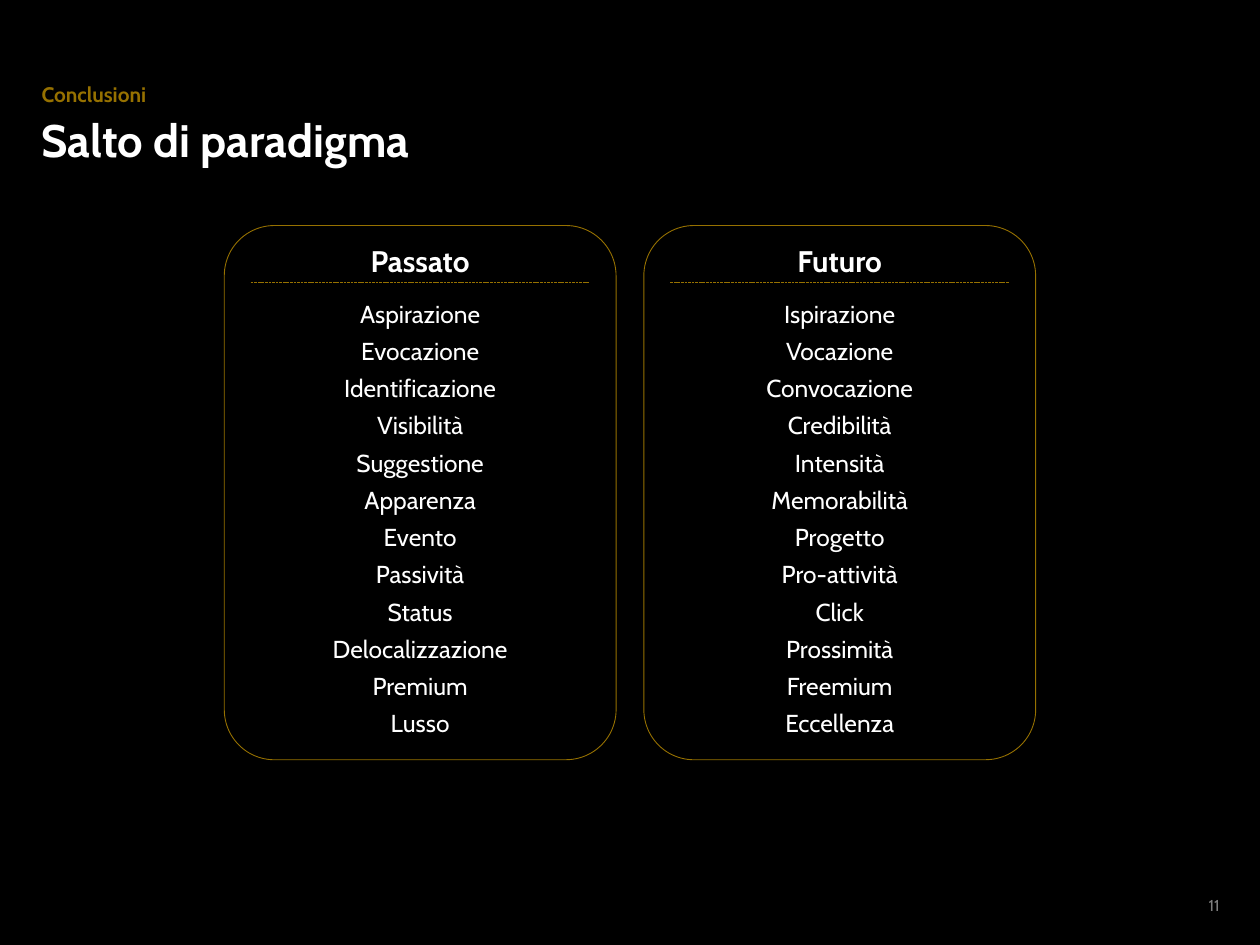
from pptx import Presentation
from pptx.dml.color import RGBColor
from pptx.enum.dml import MSO_LINE_DASH_STYLE as Dash
from pptx.enum.shapes import MSO_CONNECTOR as Connector, MSO_SHAPE as Shape
from pptx.enum.text import MSO_ANCHOR as Anchor, PP_ALIGN as Align
from pptx.oxml.ns import qn
from pptx.util import Inches, Pt
from lxml.etree import SubElement

FONT = "Cabin"
COLORS = {"black": "000000", "white": "FFFFFF", "gold": "967100", "gray": "7F7F7F"}

CARDS = {
    "Passato": [
        "Aspirazione", "Evocazione", "Identificazione", "Visibilità",
        "Suggestione", "Apparenza", "Evento", "Passività", "Status",
        "Delocalizzazione", "Premium", "Lusso",
    ],
    "Futuro": [
        "Ispirazione", "Vocazione", "Convocazione", "Credibilità",
        "Intensità", "Memorabilità", "Progetto", "Pro-attività", "Click",
        "Prossimità", "Freemium", "Eccellenza",
    ],
}


def color(name):
    return RGBColor.from_string(COLORS[name])


def style_para(para, size, color_name, bold=False, align=Align.LEFT):
    para.alignment = align
    para.font.name = FONT
    para.font.size = Pt(size)
    para.font.bold = bold
    para.font.color.rgb = color(color_name)


def set_frame(frame, anchor, left=0, top=0, right=0, bottom=0):
    """Wrap the text and set its anchor and its margins in inches."""
    frame.word_wrap = True
    frame.vertical_anchor = anchor
    frame.margin_left, frame.margin_top = Inches(left), Inches(top)
    frame.margin_right, frame.margin_bottom = Inches(right), Inches(bottom)


def style_line(line):
    line.color.rgb = color("gold")
    line.width = Pt(0.5)


def add_heading(page, left, top, width):
    kicker = page.shapes.add_textbox(
        Inches(left), Inches(top), Inches(1.39), Inches(0.29))
    set_frame(kicker.text_frame, Anchor.TOP, top=0.04, right=0.09, bottom=0.04)
    kicker.text_frame.text = "Conclusioni"
    style_para(kicker.text_frame.paragraphs[0], 12, "gold", bold=True)

    title = page.shapes.title
    title.left, title.top = Inches(left), Inches(top + 0.28)
    title.width, title.height = Inches(width), Inches(0.56)
    set_frame(title.text_frame, Anchor.TOP)
    title.text_frame.text = "Salto di paradigma"
    style_para(title.text_frame.paragraphs[0], 26, "white", bold=True)


def add_card(shapes, heading, words, left, top, width, height):
    """Add a rounded outline with a heading, a dashed rule and a word list."""
    card = shapes.add_shape(
        Shape.ROUNDED_RECTANGLE,
        Inches(left), Inches(top), Inches(width), Inches(height))
    card.adjustments[0] = 0.128
    card.shadow.inherit = False
    card.fill.background()
    style_line(card.line)

    frame = card.text_frame
    set_frame(frame, Anchor.MIDDLE, left=0.1, right=0.1, bottom=0.05)
    frame.text = "\n".join([heading, *words])
    for para in frame.paragraphs:
        style_para(para, 14, "white", align=Align.CENTER)
        para.line_spacing = Pt(21.3)
    first, second = frame.paragraphs[:2]
    style_para(first, 17, "white", bold=True, align=Align.CENTER)
    second.space_before = Pt(7)

    inset, rule_y = 0.21, Inches(top + 0.45)
    rule = shapes.add_connector(
        Connector.STRAIGHT,
        Inches(left + inset), rule_y, Inches(left + width - inset), rule_y)
    style_line(rule.line)
    rule.line.dash_style = Dash.SQUARE_DOT
    SubElement(rule.element.spPr, qn("a:effectLst"))


def add_cards(page, left, top, width, height, gap):
    group = page.shapes.add_group_shape()
    card_width = (width - gap) / len(CARDS)
    for index, (heading, words) in enumerate(CARDS.items()):
        card_left = left + index * (card_width + gap)
        add_card(group.shapes, heading, words, card_left, top, card_width, height)


def add_page_number(page, left, top, width, height):
    number = page.shapes.add_textbox(
        Inches(left), Inches(top), Inches(width), Inches(height))
    set_frame(number.text_frame, Anchor.MIDDLE)
    number.text_frame.text = "11"
    style_para(number.text_frame.paragraphs[0], 9, "gray", align=Align.RIGHT)


def main():
    deck = Presentation()
    deck.slide_width, deck.slide_height = Inches(10), Inches(7.5)
    page = deck.slides.add_slide(deck.slide_layouts.get_by_name("Title Only"))
    page.background.fill.solid()
    page.background.fill.fore_color.rgb = color("black")

    add_heading(page, 0.33, 0.61, 8.33)
    add_cards(page, 1.78, 1.79, 6.44, 4.24, gap=0.22)
    add_page_number(page, 8.34, 7.1, 1.34, 0.17)
    deck.save("out.pptx")


if __name__ == "__main__":
    main()
